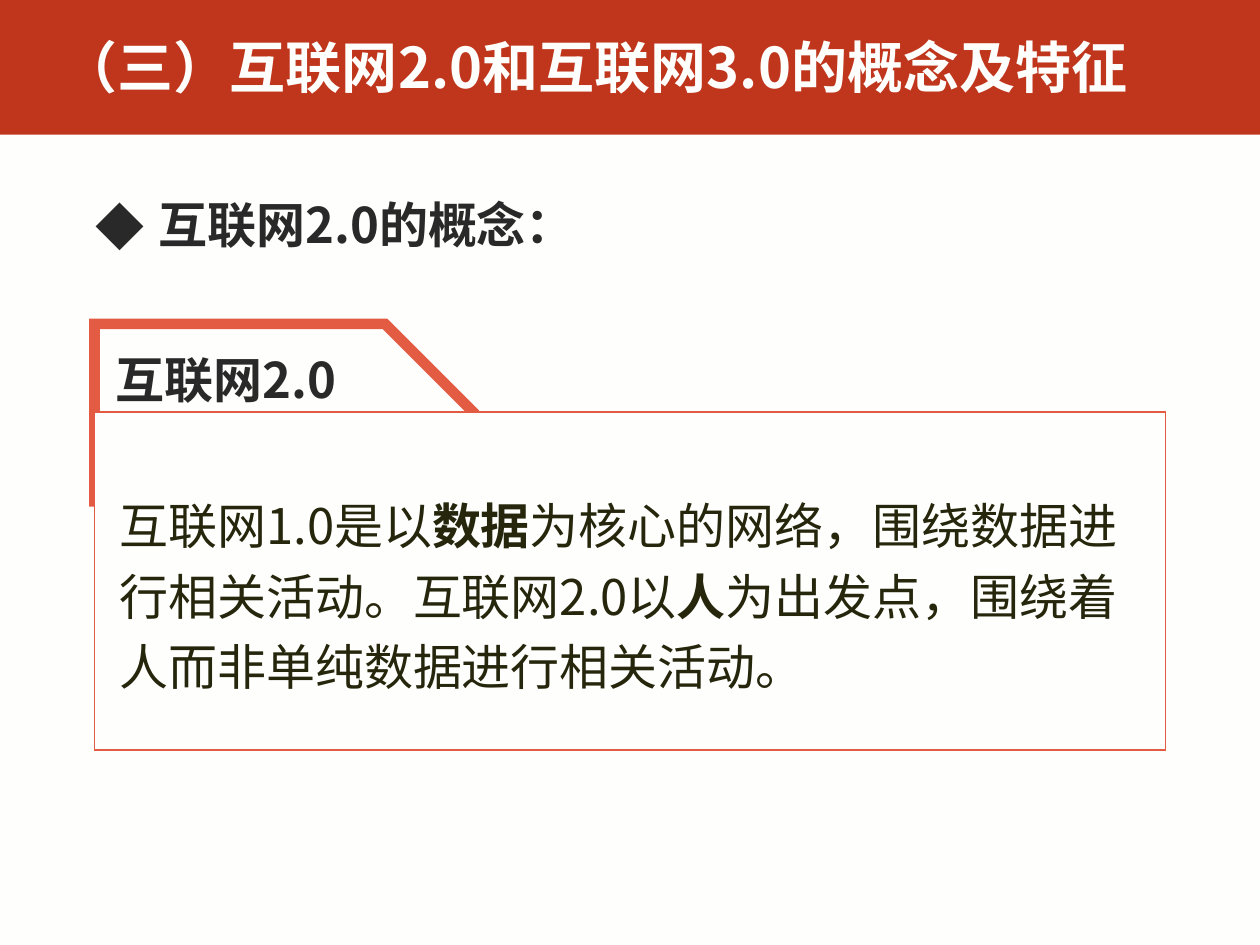
from lxml.etree import SubElement
from pptx import Presentation
from pptx.dml.color import RGBColor
from pptx.enum.shapes import MSO_SHAPE
from pptx.enum.text import MSO_ANCHOR, MSO_AUTO_SIZE, PP_ALIGN
from pptx.oxml.ns import qn
from pptx.util import Inches, Pt

FONT = "Noto Sans CJK SC"
RED = RGBColor(0xBF, 0x36, 0x1C)
CORAL = RGBColor(0xE3, 0x5B, 0x42)
PAPER = RGBColor(0xFE, 0xFE, 0xFC)
CHARCOAL = RGBColor(0x29, 0x29, 0x29)
OLIVE = RGBColor(0x26, 0x26, 0x0D)


def write_text(shape, *pieces, size=28, color=CHARCOAL, bold=(), align=PP_ALIGN.LEFT,
               spacing=1.2):
    """Fill the shape with one paragraph; pieces listed in bold are set bold."""
    frame = shape.text_frame
    frame.word_wrap = True
    frame.auto_size = MSO_AUTO_SIZE.SHAPE_TO_FIT_TEXT
    frame.vertical_anchor = MSO_ANCHOR.TOP
    paragraph = frame.paragraphs[0]
    paragraph.alignment = align
    paragraph.line_spacing = spacing
    paragraph.space_before = Pt(0)
    for piece in pieces:
        run = paragraph.add_run()
        run.text = piece
        font = run.font
        font.name, font.size, font.bold = FONT, Pt(size), piece in bold
        font.color.rgb = color
        SubElement(font._element, qn("a:ea"), typeface=FONT)
    return paragraph


class SlideBuilder:
    def __init__(self, presentation):
        self.slide = presentation.slides.add_slide(presentation.slide_layouts[1])
        fill = self.slide.background.fill
        fill.solid()
        fill.fore_color.rgb = PAPER

    def panel(self, kind, *box, fill=PAPER, line=None, width=1):
        shape = self.slide.shapes.add_shape(kind, *map(Inches, box))
        shape.shadow.inherit = False
        shape.fill.solid()
        shape.fill.fore_color.rgb = fill
        if line is None:
            shape.line.fill.background()
        else:
            shape.line.color.rgb = line
            shape.line.width = Pt(width)
            SubElement(shape.line._get_or_add_ln(), qn("a:miter"), lim="800000")
        return shape

    def band(self, *box):
        """Add a filled strip behind the placeholders."""
        strip = self.panel(MSO_SHAPE.RECTANGLE, *box, fill=RED)
        self.slide.shapes._spTree.insert(2, strip._element)

    def placeholder(self, index, *box):
        shape = self.slide.placeholders[index]
        shape.left, shape.top, shape.width, shape.height = map(Inches, box)
        return shape

    def title(self, text, *box):
        write_text(self.placeholder(0, *box), text, size=32, color=PAPER, bold=(text,),
                   spacing=1.0)

    def bullet(self, text, *box):
        paragraph = write_text(self.placeholder(1, *box), text, bold=(text,),
                               align=PP_ALIGN.JUSTIFY)
        properties = paragraph._p.get_or_add_pPr()
        properties.set("marL", str(Inches(0.5)))
        properties.set("indent", str(Inches(-0.5)))
        SubElement(properties, qn("a:buFont"), typeface=FONT)
        SubElement(properties, qn("a:buChar"), char="◆")

    def text(self, *pieces, box, **style):
        write_text(self.slide.shapes.add_textbox(*map(Inches, box)), *pieces, **style)


def main():
    presentation = Presentation()
    presentation.slide_width, presentation.slide_height = Inches(10), Inches(7.5)
    builder = SlideBuilder(presentation)

    builder.band(0, 0, 10, 1.07)
    builder.title("（三）互联网2.0和互联网3.0的概念及特征", 0.39, 0.21, 9.56, 0.64)
    builder.bullet("互联网2.0的概念：", 0.66, 1.4, 9.56, 0.59)

    tab = builder.panel(MSO_SHAPE.SNIP_1_RECTANGLE, 0.75, 2.57, 3.01, 1.41,
                        line=CORAL, width=6)
    tab.adjustments[0] = 0.5
    builder.panel(MSO_SHAPE.RECTANGLE, 0.75, 3.27, 8.5, 2.68, line=CORAL)
    builder.text("互联网1.0是以", "数据", "为核心的网络，围绕数据进行相关活动。互联网2.0以",
                 "人", "为出发点，围绕着人而非单纯数据进行相关活动。",
                 box=(0.85, 3.79, 8.31, 1.72), color=OLIVE, bold=("数据", "人"))
    builder.text("互联网2.0", box=(0.82, 2.63, 4.42, 0.59), bold=("互联网2.0",),
                 align=PP_ALIGN.JUSTIFY)

    presentation.save("out.pptx")


if __name__ == "__main__":
    main()
